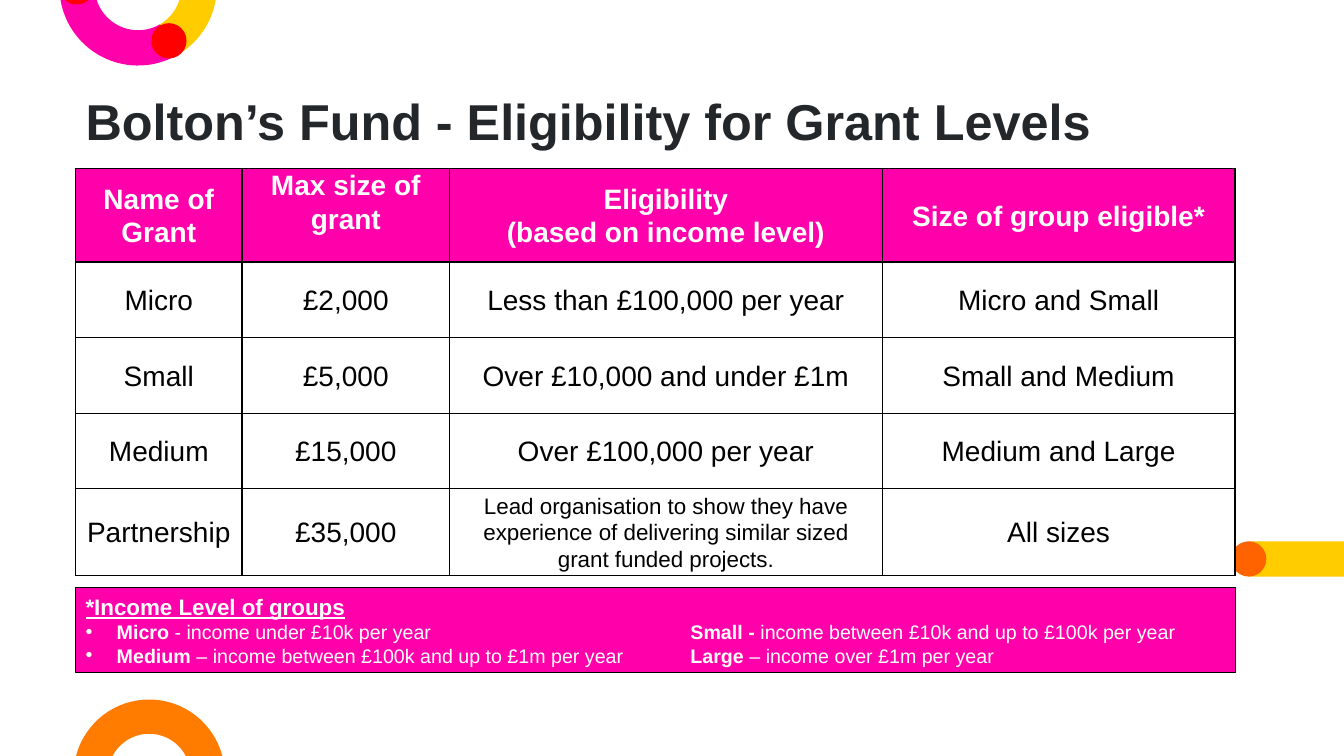
import math

import lxml.etree
import pptx
import pptx.dml.color
import pptx.enum.shapes
import pptx.enum.text
import pptx.oxml
import pptx.oxml.ns
import pptx.util

Inches, Pt = pptx.util.Inches, pptx.util.Pt
RGB = pptx.dml.color.RGBColor.from_string
Shape = pptx.enum.shapes.MSO_SHAPE
Anchor = pptx.enum.text.MSO_ANCHOR
qn = pptx.oxml.ns.qn

THEME = {
    "font": "Arial", "title": 36, "table": 20, "small": 16, "note": 14,
    "ink": "24272A", "black": "000000", "white": "FFFFFF", "magenta": "FF00AB",
    "pink": "FF00AA", "yellow": "FFCC00", "red": "FF0000",
    "orange": "FF7C00", "deep orange": "FF6300",
}
WIDTH, HEIGHT = 13.33, 7.5
LEFT, CONTENT_WIDTH = 0.75, 11.5
DOT = 0.35

deck = pptx.Presentation()
deck.slide_width, deck.slide_height = Inches(WIDTH), Inches(HEIGHT)
page = deck.slides.add_slide(deck.slide_layouts[6])


def arc(center, radius, start, stop, steps=32):
    """Points of a circular arc; angles in degrees, clockwise from the right."""
    angles = [math.radians(start + (stop - start) * i / steps) for i in range(steps + 1)]
    return [(Inches(center[0] + radius * math.cos(a)),
             Inches(center[1] + radius * math.sin(a))) for a in angles]


def style(font, size, color, bold=False):
    font.name, font.size, font.bold = THEME["font"], Pt(size), bold
    font.color.rgb = RGB(THEME[color])


# Rings cut off by the top and bottom edges of the slide
top, top_outer, top_inner = (1.37, -0.13), 0.78, 0.43
bottom, bottom_outer, bottom_inner = (1.48, 7.69), 0.75, 0.41
cap, joint = (0.76, -0.13), 60
outer_cut, inner_cut, cap_cut = [
    math.degrees(math.asin(0.13 / radius)) for radius in (top_outer, top_inner, DOT / 2)]
low_outer, low_inner = [
    math.degrees(math.asin((bottom[1] - HEIGHT) / radius)) for radius in (bottom_outer, bottom_inner)]
outlines = [
    ("yellow", arc(top, top_outer, outer_cut, joint) + arc(top, top_inner, joint, inner_cut)),
    ("pink", arc(top, top_outer, joint, 180 - outer_cut) + arc(top, top_inner, 180 - inner_cut, joint)),
    ("red", arc(cap, DOT / 2, cap_cut, 180 - cap_cut)),
    ("orange", arc(bottom, bottom_outer, 180 + low_outer, 360 - low_outer)
     + arc(bottom, bottom_inner, 360 - low_inner, 180 + low_inner)),
]
ornaments = []
for color, points in outlines:
    builder = page.shapes.build_freeform(*points[0])
    builder.add_line_segments(points[1:], close=True)
    ornaments.append((builder.convert_to_shape(), color))

# Joint of the top ring and the bar that leaves the right edge
for kind, x, y, width, color in [
    (Shape.OVAL, 1.5, 0.23, DOT, "red"),
    (Shape.RECTANGLE, 12.39, 5.37, WIDTH - 12.39, "yellow"),
    (Shape.OVAL, 12.21, 5.37, DOT, "deep orange"),
]:
    shape = page.shapes.add_shape(kind, Inches(x), Inches(y), Inches(width), Inches(DOT))
    ornaments.append((shape, color))
for shape, color in ornaments:
    shape.shadow.inherit = False
    shape.fill.solid()
    shape.fill.fore_color.rgb = RGB(THEME[color])
    shape.line.fill.background()

# Title
title = page.shapes.add_textbox(Inches(LEFT), Inches(0.79), Inches(10.87), Inches(0.85))
title.text_frame.word_wrap = True
title.text_frame.margin_top = Inches(0.1)
title.text_frame.text = "Bolton’s Fund - Eligibility for Grant Levels"
style(title.text_frame.paragraphs[0].runs[0].font, THEME["title"], "ink", True)

# Grant table
grants = [
    ["Name of Grant", "Max size of grant", "Eligibility\n(based on income level)", "Size of group eligible*"],
    ["Micro", "£2,000", "Less than £100,000 per year", "Micro and Small"],
    ["Small", "£5,000", "Over £10,000 and under £1m", "Small and Medium"],
    ["Medium", "£15,000", "Over £100,000 per year", "Medium and Large"],
    ["Partnership", "£35,000",
     "Lead organisation to show they have experience of delivering similar sized grant funded projects.",
     "All sizes"],
]
column_widths = [1.65, 2.06, 4.29, 3.5]
row_heights = [0.93, 0.75, 0.75, 0.75, 0.8]
table = page.shapes.add_table(len(grants), len(column_widths), Inches(LEFT), Inches(1.67),
                              Inches(CONTENT_WIDTH), Inches(sum(row_heights))).table
for column, width in zip(table.columns, column_widths):
    column.width = Inches(width)
for r, (row, height) in enumerate(zip(grants, row_heights)):
    table.rows[r].height = Inches(height)
    header = r == 0
    for c, text in enumerate(row):
        cell = table.cell(r, c)
        properties = cell._tc.get_or_add_tcPr()
        for side in ("lnL", "lnR", "lnT", "lnB"):
            border = lxml.etree.SubElement(properties, qn("a:" + side), w=str(Pt(1)))
            fill = lxml.etree.SubElement(border, qn("a:solidFill"))
            lxml.etree.SubElement(fill, qn("a:srgbClr"), val=THEME["black"])
        cell.fill.solid()
        cell.fill.fore_color.rgb = RGB(THEME["magenta" if header else "white"])
        cell.margin_left = cell.margin_right = Inches(0.07)
        cell.margin_top = cell.margin_bottom = 0
        cell.vertical_anchor = Anchor.TOP if (r, c) == (0, 1) else Anchor.MIDDLE
        cell.text_frame.text = text
        size = THEME["small" if (r, c) == (4, 2) else "table"]
        for para in cell.text_frame.paragraphs:
            para.alignment = pptx.enum.text.PP_ALIGN.CENTER
            para.line_spacing = 1.07
            style(para.runs[0].font, size, "white" if header else "black", header)

# Income level note
note = page.shapes.add_shape(Shape.RECTANGLE, Inches(LEFT), Inches(5.83),
                             Inches(CONTENT_WIDTH), Inches(0.84))
note.shadow.inherit = False
note.fill.solid()
note.fill.fore_color.rgb = RGB(THEME["magenta"])
note.line.color.rgb = RGB(THEME["black"])
note.line.width = Pt(0.75)
frame = note.text_frame
frame.word_wrap = True
frame.vertical_anchor = Anchor.MIDDLE
frame.text = "*Income Level of groups"
heading = frame.paragraphs[0]
heading.alignment = pptx.enum.text.PP_ALIGN.LEFT
style(heading.runs[0].font, THEME["small"], "white", True)
heading.runs[0].font.underline = True

levels = [
    ["Micro", " - income under £10k per year\t", "Small - ", "income between £10k and up to £100k per year"],
    ["Medium ", "– income between £100k and up to £1m per year\t", "Large", " – income over £1m per year"],
]
for spans in levels:
    para = frame.add_paragraph()
    para.alignment = pptx.enum.text.PP_ALIGN.LEFT
    properties = para._p.get_or_add_pPr()
    properties.set("marL", str(Inches(0.31)))
    properties.set("indent", str(-Inches(0.31)))
    lxml.etree.SubElement(properties, qn("a:buFont"), typeface=THEME["font"])
    lxml.etree.SubElement(properties, qn("a:buChar"), char="•")
    tabs = lxml.etree.SubElement(properties, qn("a:tabLst"))
    lxml.etree.SubElement(tabs, qn("a:tab"), pos=str(Inches(6)), algn="l")
    for i, text in enumerate(spans):
        span = para.add_run()
        span.text = text
        style(span.font, THEME["note"], "white", i % 2 == 0)

deck.save("out.pptx")
